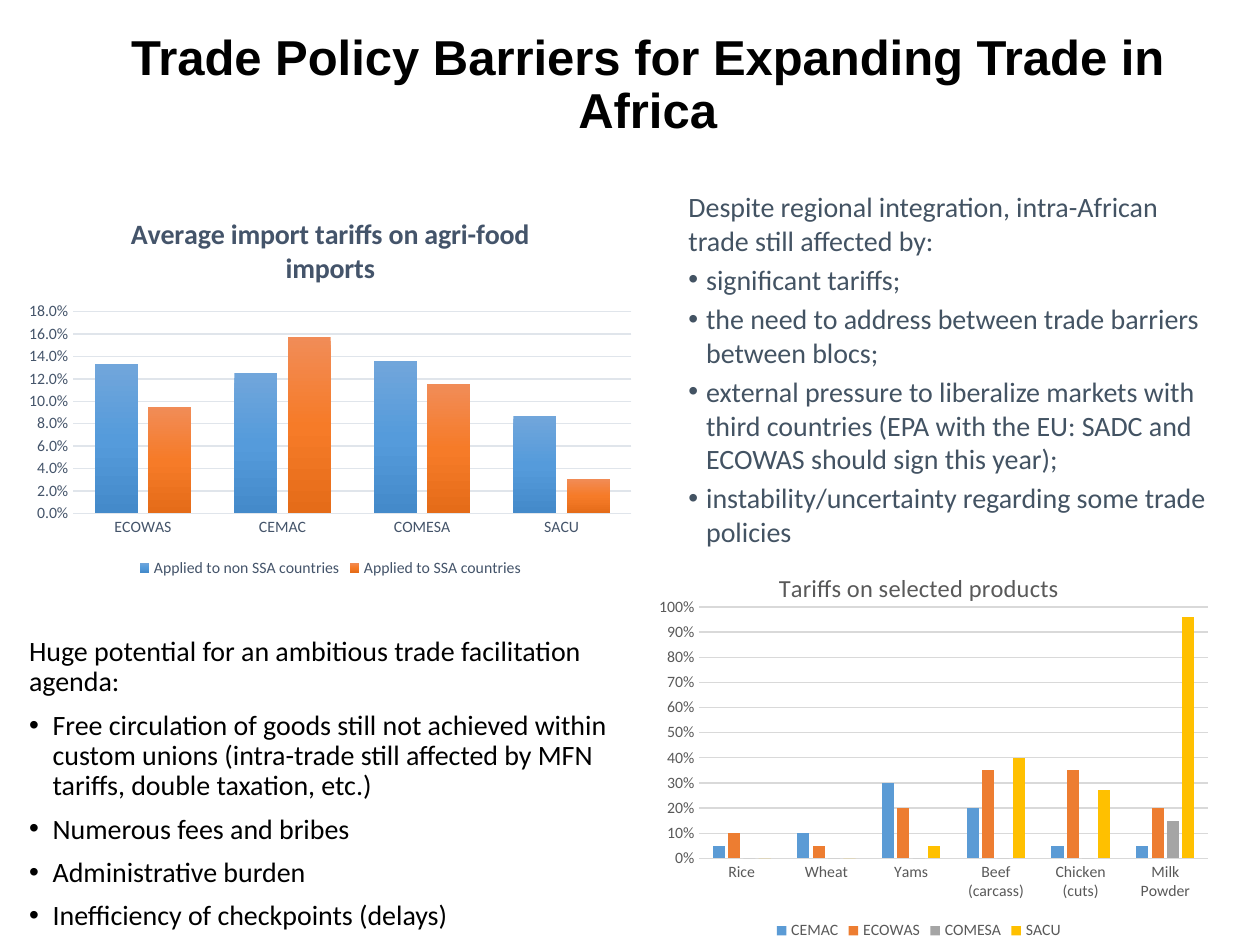
from copy import deepcopy
from dataclasses import dataclass

from lxml import etree
from pptx import Presentation
from pptx.chart.data import CategoryChartData
from pptx.dml.color import RGBColor
from pptx.enum import chart as ch, text as tx
from pptx.oxml.ns import qn
from pptx.util import Pt


@dataclass(frozen=True)
class Theme:
    head: str = "Arial"
    font: str = "Calibri"
    black: str = "000000"
    slate: str = "435363"
    navy: str = "44546A"
    mist: str = "E0E5EB"
    grey: str = "595959"
    pale: str = "D9D9D9"
    blues: tuple = ("71A6DB", "559BDB", "448ACA")
    warms: tuple = ("F18C57", "F67B28", "E56C19")
    flats: tuple = ("5B9BD5", "ED7D31", "A5A5A5", "FFC000")
    title: int = 28
    body: int = 16
    small: int = 14
    label: int = 9


T = Theme()

POTENTIAL = (
    "Huge potential for an ambitious trade facilitation agenda:",
    "Free circulation of goods still not achieved within custom unions "
    "(intra-trade still affected by MFN tariffs, double taxation, etc.)",
    "Numerous fees and bribes",
    "Administrative burden",
    "Inefficiency of checkpoints (delays)",
)
BARRIERS = (
    "Despite regional integration, intra-African trade still affected by:",
    "significant tariffs;",
    "the need to address between trade barriers between blocs;",
    "external pressure to liberalize markets with third countries "
    "(EPA with the EU: SADC and ECOWAS should sign this year);",
    "instability/uncertainty regarding some trade policies",
)
BLOCS = ("ECOWAS", "CEMAC", "COMESA", "SACU")
AVERAGE = {
    "Applied to non SSA countries": (0.133, 0.125, 0.136, 0.087),
    "Applied to SSA countries": (0.095, 0.157, 0.115, 0.031),
}
GOODS = ("Rice", "Wheat", "Yams", "Beef (carcass)", "Chicken (cuts)",
         "Milk Powder")
TARIFFS = {
    "CEMAC": (0.05, 0.1, 0.3, 0.2, 0.05, 0.05),
    "ECOWAS": (0.1, 0.05, 0.2, 0.35, 0.35, 0.2),
    "COMESA": (0, 0, 0, 0, 0, 0.15),
    "SACU": (0, 0, 0.05, 0.4, 0.27, 0.96),
}


def style(font, size, color, bold=False, name=T.font):
    font.name, font.size, font.bold = name, Pt(size), bold
    font.color.rgb = RGBColor.from_string(color)


def place(shape, left, top, width, height):
    shape.left, shape.top = Pt(left), Pt(top)
    shape.width, shape.height = Pt(width), Pt(height)


def inset(frame, side, edge):
    frame.word_wrap = True
    frame.auto_size = tx.MSO_AUTO_SIZE.NONE
    frame.margin_left = frame.margin_right = Pt(side)
    frame.margin_top = frame.margin_bottom = Pt(edge)


def add_title(slide, words, box):
    shape = slide.shapes.title
    place(shape, *box)
    frame = shape.text_frame
    inset(frame, 7.2, 1.44)
    frame.vertical_anchor = tx.MSO_ANCHOR.MIDDLE
    frame.text = words
    para = frame.paragraphs[0]
    para.alignment = tx.PP_ALIGN.CENTER
    para.line_spacing = 0.9
    style(para.runs[0].font, T.title, T.black, True, T.head)


def mark(para, indent):
    props = para._p.get_or_add_pPr()
    props.set("marL", str(Pt(indent)))
    props.set("indent", str(-Pt(indent)))
    if indent:
        etree.SubElement(props, qn("a:buFont")).set("typeface", T.head)
        etree.SubElement(props, qn("a:buChar")).set("char", "•")
    else:
        etree.SubElement(props, qn("a:buNone"))


def fill_list(frame, lines, color, indent, before, spacing):
    frame.text = "\n".join(lines)
    for i, para in enumerate(frame.paragraphs):
        para.line_spacing = spacing
        para.space_before = Pt(before)
        mark(para, indent if i else 0)
        style(para.runs[0].font, T.body, color)


def shade(series, colors):
    fill = series.format.fill
    fill.gradient()
    fill.gradient_angle = 270
    stops = series._element.find(".//" + qn("a:gsLst"))
    stops.insert(1, deepcopy(stops[0]))
    for stop, color, at in zip(fill.gradient_stops, colors, (0, 0.5, 1)):
        stop.position = at
        stop.color.rgb = RGBColor.from_string(color)


def paint(series, color):
    if isinstance(color, tuple):
        shade(series, color)
    else:
        series.format.fill.solid()
        series.format.fill.fore_color.rgb = RGBColor.from_string(color)


def rule(line, color):
    line.width = Pt(0.75)
    line.color.rgb = RGBColor.from_string(color)


def fix_plot(chart, *sides):
    area = chart._chartSpace.find(".//" + qn("c:plotArea"))
    for old in area.findall(qn("c:layout")):
        area.remove(old)
    layout = etree.Element(qn("c:layout"))
    area.insert(0, layout)
    manual = etree.SubElement(layout, qn("c:manualLayout"))
    pairs = [("layoutTarget", "inner"), ("xMode", "edge"), ("yMode", "edge")]
    for key, val in pairs + list(zip("xywh", sides)):
        etree.SubElement(manual, qn("c:" + key)).set("val", str(val))


def add_bars(slide, box, title, size, bold, cats, rows, colors, ink, grid,
             gap, overlap, top, step, form):
    data = CategoryChartData(number_format=form)
    data.categories = cats
    for name, vals in rows.items():
        data.add_series(name, vals)
    chart = slide.shapes.add_chart(
        ch.XL_CHART_TYPE.COLUMN_CLUSTERED, *map(Pt, box), data).chart
    style(chart.font, T.label, ink)
    frame = chart.chart_title.text_frame
    frame.text = title
    style(frame.paragraphs[0].runs[0].font, size, ink, bold)
    chart.chart_title.include_in_layout = False
    chart.has_legend = True
    chart.legend.position = ch.XL_LEGEND_POSITION.BOTTOM
    chart.legend.include_in_layout = False
    style(chart.legend.font, T.label, ink)
    plot = chart.plots[0]
    plot.gap_width, plot.overlap = gap, overlap
    plot.vary_by_categories = False
    for series, color in zip(plot.series, colors):
        paint(series, color)
    for axis in (chart.category_axis, chart.value_axis):
        axis.major_tick_mark = axis.minor_tick_mark = ch.XL_TICK_MARK.NONE
        style(axis.tick_labels.font, T.label, ink)
    rule(chart.category_axis.format.line, grid)
    value = chart.value_axis
    value.minimum_scale, value.maximum_scale, value.major_unit = 0, top, step
    value.tick_labels.number_format = form
    value.tick_labels.number_format_is_linked = False
    value.format.line.fill.background()
    rule(value.major_gridlines.format.line, grid)
    return chart


def main():
    deck = Presentation()
    deck.slide_width, deck.slide_height = Pt(720), Pt(540)
    slide = deck.slides.add_slide(deck.slide_layouts[1])
    add_title(slide, "Trade Policy Barriers for Expanding Trade in Africa",
              (59.8, 10, 620.6, 78.5))
    body = slide.placeholders[1]
    place(body, 9.4, 360.7, 363.6, 134.6)
    inset(body.text_frame, 7.2, 3.6)
    fill_list(body.text_frame, POTENTIAL, T.black, 13.5, 7.5, 0.9)
    add_bars(slide, (9.4, 111.6, 358.6, 221),
             "Average import tariffs on agri-food imports", T.body, True,
             BLOCS, AVERAGE, (T.blues, T.warms), T.navy, T.mist,
             100, -24, 0.18, 0.02, "0.0%")
    notes = slide.shapes.add_textbox(*map(Pt, (388, 105.8, 314, 169.2)))
    inset(notes.text_frame, 5.4, 2.7)
    fill_list(notes.text_frame, BARRIERS, T.slate, 10.1, 3.2, 1.0)
    chart = add_bars(slide, (360, 315.4, 330.5, 224.6),
                     "Tariffs on selected products", T.small, False,
                     GOODS, TARIFFS, T.flats, T.grey, T.pale,
                     219, -27, 1, 0.1, "0%")
    fix_plot(chart, 0.12, 0.14, 0.88, 0.64)
    deck.save("out.pptx")


if __name__ == "__main__":
    main()
